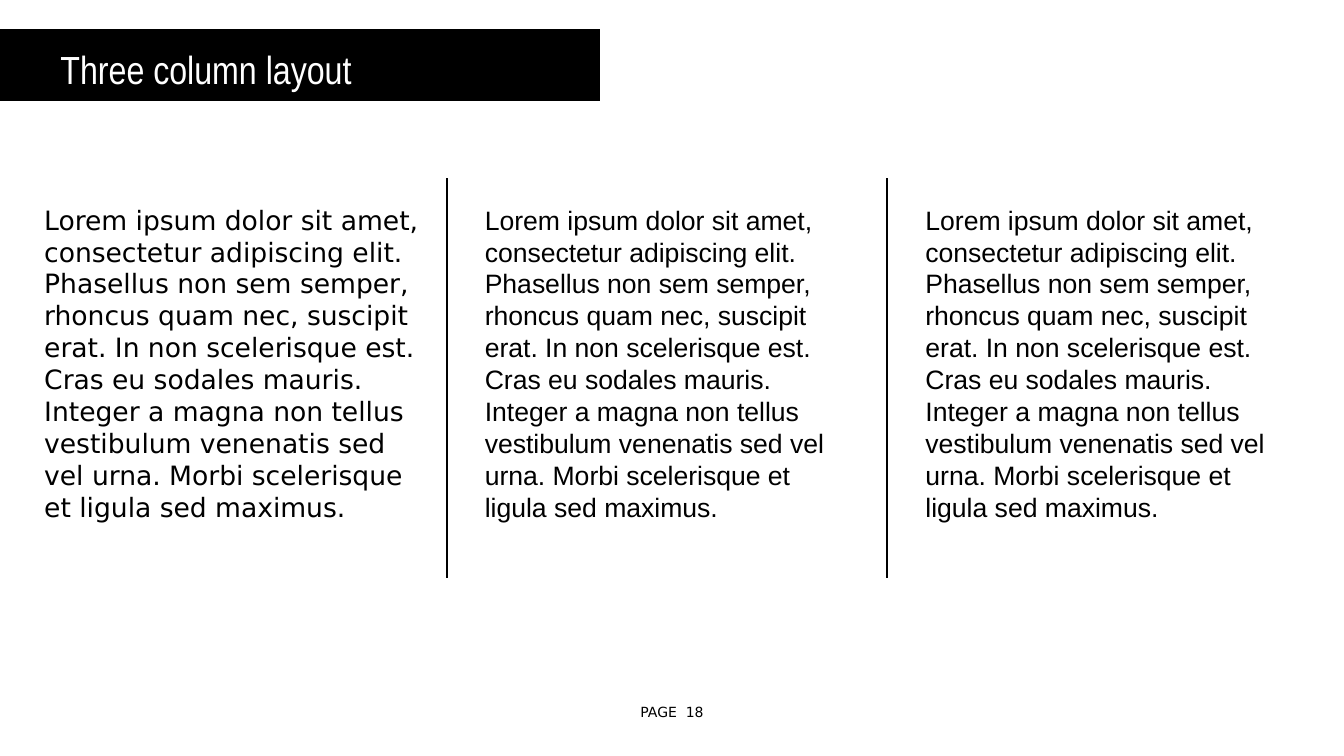
import pptx
import pptx.dml.color
import pptx.enum.shapes
import pptx.enum.text
import pptx.oxml.ns
import pptx.util
from lxml import etree

BODY = (
    "Lorem ipsum dolor sit amet, consectetur adipiscing elit. Phasellus non sem "
    "semper, rhoncus quam nec, suscipit erat. In non scelerisque est. Cras eu "
    "sodales mauris. Integer a magna non tellus vestibulum venenatis sed vel urna. "
    "Morbi scelerisque et ligula sed maximus."
)
COLUMN_FONTS = ["DejaVu Sans", "Arial", "Arial"]
BLACK, WHITE = "000000", "FFFFFF"


def color(hex_string):
    return pptx.dml.color.RGBColor.from_string(hex_string)


class ColumnSlide:
    """A slide with a title bar and equal text columns split by rules."""

    width, height = 13.33, 7.5
    column_left, column_pitch, column_width = 0.34, 4.37, 3.91
    column_top, column_height = 1.97, 3.65
    rule_offset, rule_top, rule_bottom = 0.28, 1.77, 5.73

    def __init__(self, presentation):
        presentation.slide_width = pptx.util.Inches(self.width)
        presentation.slide_height = pptx.util.Inches(self.height)
        title_only = presentation.slide_layouts.get_by_name("Title Only")
        self.slide = presentation.slides.add_slide(title_only)

    def left_of(self, column):
        return self.column_left + column * self.column_pitch

    def set_text(self, shape, text, font, size, text_color, align="LEFT", anchor="TOP"):
        frame = shape.text_frame
        frame.text = text
        frame.word_wrap = True
        frame.auto_size = pptx.enum.text.MSO_AUTO_SIZE.NONE
        frame.vertical_anchor = pptx.enum.text.MSO_ANCHOR[anchor]
        paragraph = frame.paragraphs[0]
        paragraph.alignment = pptx.enum.text.PP_ALIGN[align]
        paragraph.font.name = font
        paragraph.font.size = pptx.util.Pt(size)
        paragraph.font.color.rgb = color(text_color)
        return paragraph

    def text_box(self, left, top, width, height):
        return self.slide.shapes.add_textbox(
            *map(pptx.util.Inches, (left, top, width, height))
        )

    def title_bar(self, text):
        title = self.slide.shapes.title
        title.left, title.top, title.width, title.height = map(
            pptx.util.Inches, (-0.05, 0.29, 6, 0.71)
        )
        title.fill.solid()
        title.fill.fore_color.rgb = color(BLACK)
        paragraph = self.set_text(
            title, text, "Arial Narrow", 28, WHITE, anchor="MIDDLE"
        )
        paragraph.line_spacing = 1.15
        title.text_frame.margin_left = pptx.util.Inches(0.4)
        # Paragraph indent
        properties = paragraph._p.get_or_add_pPr()
        properties.set("marL", str(pptx.util.Inches(0.25)))
        properties.set("indent", "0")

    def column(self, index, text, font):
        box = self.text_box(
            self.left_of(index), self.column_top, self.column_width, self.column_height
        )
        paragraph = self.set_text(box, text, font, 19, BLACK)
        paragraph.line_spacing = pptx.util.Pt(22.8)

    def rule_before(self, column):
        x = self.left_of(column) - self.rule_offset
        rule = self.slide.shapes.add_connector(
            pptx.enum.shapes.MSO_CONNECTOR.STRAIGHT,
            *map(pptx.util.Inches, (x, self.rule_top, x, self.rule_bottom)),
        )
        rule.line.color.rgb = color(BLACK)
        rule.line.width = pptx.util.Pt(1.5)
        etree.SubElement(rule._element.spPr, pptx.oxml.ns.qn("a:effectLst"))

    def page_label(self, text):
        width = 1.11
        box = self.text_box((self.width - width) / 2, 6.93, width, 0.27)
        self.set_text(box, text, "DejaVu Sans", 10, BLACK, "CENTER", "MIDDLE")


def main():
    presentation = pptx.Presentation()
    page = ColumnSlide(presentation)

    # Title
    page.title_bar("Three column layout")

    # Text columns
    for index, font in enumerate(COLUMN_FONTS):
        page.column(index, BODY, font)

    # Footer
    page.page_label("PAGE  18")

    # Rules between columns
    for index in range(1, len(COLUMN_FONTS)):
        page.rule_before(index)

    presentation.save("out.pptx")


if __name__ == "__main__":
    main()
